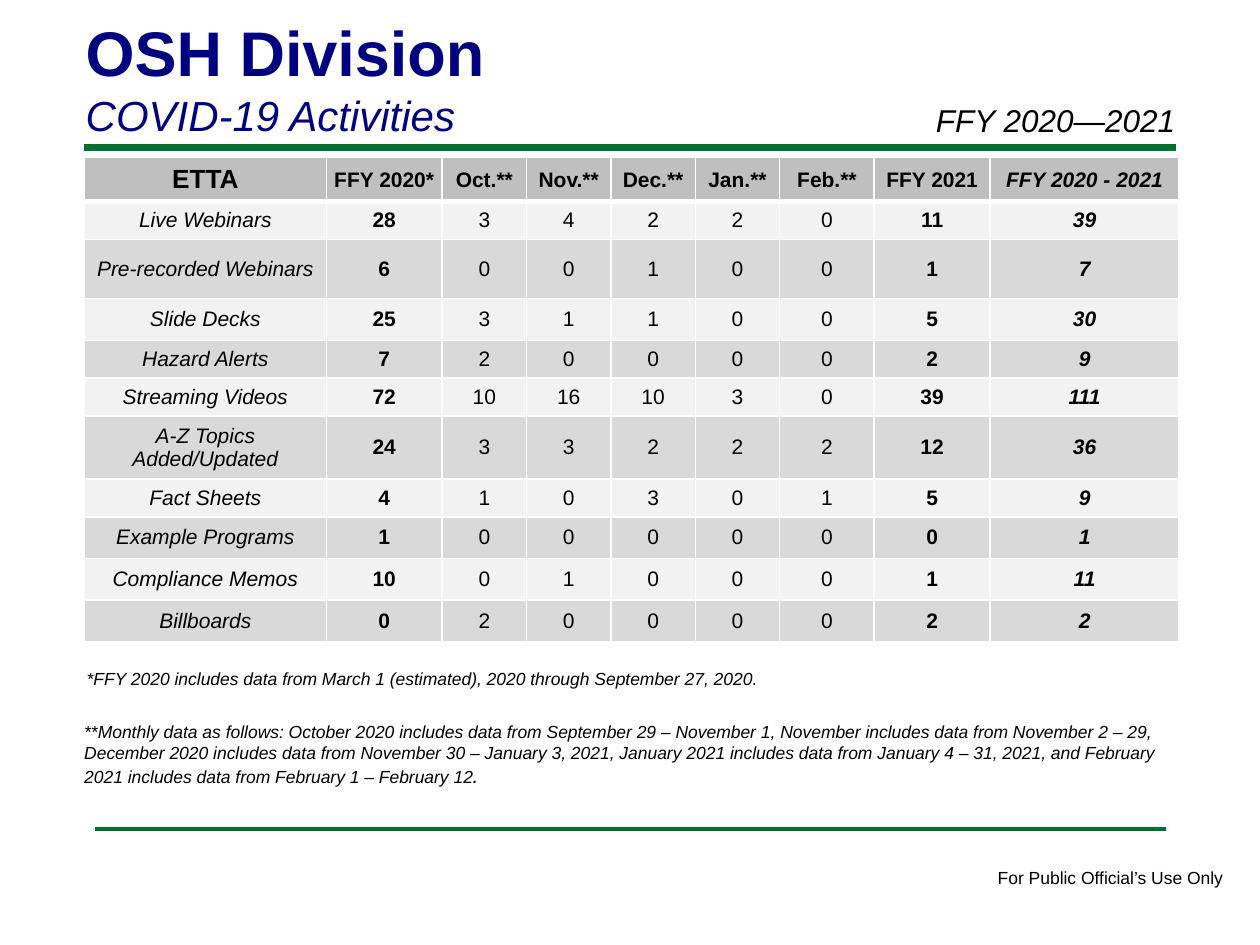
from lxml import etree
from pptx import Presentation
from pptx.dml.color import RGBColor
from pptx.enum.shapes import MSO_CONNECTOR
from pptx.enum.text import MSO_ANCHOR, MSO_AUTO_SIZE, PP_ALIGN
from pptx.oxml import parse_xml
from pptx.oxml.ns import nsdecls, qn
from pptx.util import Inches, Pt

LINE = MSO_CONNECTOR.STRAIGHT
TOP, MIDDLE = MSO_ANCHOR.TOP, MSO_ANCHOR.MIDDLE
LEFT, CENTER = PP_ALIGN.LEFT, PP_ALIGN.CENTER
FIXED = MSO_AUTO_SIZE.NONE

NAVY = RGBColor(0x00, 0x00, 0x80)
GREEN = RGBColor(0x00, 0x70, 0x30)
BLACK = RGBColor(0x00, 0x00, 0x00)
HEAD = RGBColor(0xBF, 0xBF, 0xBF)
LIGHT = RGBColor(0xF2, 0xF2, 0xF2)
DARK = RGBColor(0xD9, 0xD9, 0xD9)
WHITE = RGBColor(0xFF, 0xFF, 0xFF)

WIDTHS = [1.92, 0.92] + [0.67] * 4 + [0.75, 0.92, 1.5]
HEIGHTS = [0.33, 0.28, 0.47, 0.33, 0.28, 0.28, 0.47, 0.28, 0.33, 0.33, 0.33]
BOLD_COLS = (1, 7, 8)
ITALIC_COLS = (0, 8)
ROWS = [
    ["ETTA", "FFY 2020*", "Oct.**", "Nov.**", "Dec.**", "Jan.**", "Feb.**",
     "FFY 2021", "FFY 2020 - 2021"],
    ["Live Webinars", 28, 3, 4, 2, 2, 0, 11, 39],
    ["Pre-recorded Webinars", 6, 0, 0, 1, 0, 0, 1, 7],
    ["Slide Decks", 25, 3, 1, 1, 0, 0, 5, 30],
    ["Hazard Alerts", 7, 2, 0, 0, 0, 0, 2, 9],
    ["Streaming Videos", 72, 10, 16, 10, 3, 0, 39, 111],
    ["A-Z Topics Added/Updated", 24, 3, 3, 2, 2, 2, 12, 36],
    ["Fact Sheets", 4, 1, 0, 3, 0, 1, 5, 9],
    ["Example Programs", 1, 0, 0, 0, 0, 0, 0, 1],
    ["Compliance Memos", 10, 0, 1, 0, 0, 0, 1, 11],
    ["Billboards", 0, 2, 0, 0, 0, 0, 2, 2],
]
MONTHS = (
    "**Monthly data as follows: October 2020 includes data from September 29 – "
    "November 1, November includes data from November 2 – 29, December 2020 "
    "includes data from November 30 – January 3, 2021, January 2021 includes "
    "data from January 4 – 31, 2021, and February 2021 includes data from "
    "February 1 – February 12"
)


class Deck:
    face = "Arial"

    def __init__(self):
        self.prs = Presentation()
        self.prs.slide_width = Inches(10)
        self.prs.slide_height = Inches(7.5)
        self.slide = self.prs.slides.add_slide(self.prs.slide_layouts[5])

    def style(self, run, size, color=BLACK, bold=False, italic=False):
        font = run.font
        font.name, font.size = self.face, Pt(size)
        font.bold, font.italic = bold, italic
        font.color.rgb = color

    def title(self, head, sub, left, top, width, height):
        shape = self.slide.shapes.title
        shape.left, shape.top = Inches(left), Inches(top)
        shape.width, shape.height = Inches(width), Inches(height)
        frame = shape.text_frame
        frame.text = f"{head}\n{sub}"
        frame.vertical_anchor, frame.auto_size = TOP, FIXED
        first, second = frame.paragraphs
        first.alignment = second.alignment = LEFT
        self.style(first.runs[0], 36, NAVY, bold=True)
        self.style(second.runs[0], 24, NAVY, italic=True)

    def rule(self, left, right, top, weight):
        line = self.slide.shapes.add_connector(
            LINE, Inches(left), Inches(top), Inches(right), Inches(top))
        line.line.color.rgb, line.line.width = GREEN, Pt(weight)
        etree.SubElement(line._element.spPr, qn("a:effectLst"))

    def text(self, words, left, top, width, height, size, italic=True, wrap=True):
        box = self.slide.shapes.add_textbox(
            Inches(left), Inches(top), Inches(width), Inches(height))
        frame = box.text_frame
        frame.text, frame.word_wrap = words, wrap
        par = frame.paragraphs[0]
        self.style(par.runs[0], size, italic=italic)
        return par

    def border(self, cell, low):
        props = cell._tc.get_or_add_tcPr()
        for side, weight in (("L", 1), ("R", 1), ("T", 1), ("B", low)):
            props.append(parse_xml(
                f'<a:ln{side} {nsdecls("a")} w="{Pt(weight)}"><a:solidFill>'
                f'<a:srgbClr val="{WHITE}"/></a:solidFill></a:ln{side}>'))

    def cell(self, cell, value, row, col):
        top = row == 0
        cell.text = str(value)
        cell.vertical_anchor = MIDDLE
        if top and col:
            cell.margin_left = cell.margin_right = cell.margin_top = Inches(0.01)
            cell.margin_bottom = 0
        self.border(cell, 3 if top else 1)
        cell.fill.solid()
        cell.fill.fore_color.rgb = HEAD if top else LIGHT if row % 2 else DARK
        par = cell.text_frame.paragraphs[0]
        par.alignment = CENTER
        self.style(par.runs[0], 15 if top and col == 0 else 12,
                   bold=top or col in BOLD_COLS,
                   italic=col in ITALIC_COLS and not (top and col == 0))

    def table(self, rows, left, top):
        table = self.slide.shapes.add_table(
            len(rows), len(WIDTHS), Inches(left), Inches(top),
            Inches(sum(WIDTHS)), Inches(sum(HEIGHTS))).table
        for col, width in zip(table.columns, WIDTHS):
            col.width = Inches(width)
        for line, height in zip(table.rows, HEIGHTS):
            line.height = Inches(height)
        for r, row in enumerate(rows):
            for c, value in enumerate(row):
                self.cell(table.cell(r, c), value, r, c)


def main():
    deck = Deck()
    deck.rule(0.67, 9.33, 1.17, 4)
    deck.rule(0.75, 9.25, 6.58, 2)
    deck.text("For Public Official’s Use Only", 7.82, 6.83, 2.01, 0.27, 10,
              italic=False, wrap=False)
    deck.title("OSH Division", "COVID-19 Activities", 0.58, 0.06, 8.25, 1.11)
    deck.table(ROWS, 0.67, 1.25)
    deck.text("*FFY 2020 includes data from March 1 (estimated), 2020 through "
              "September 27, 2020.", 0.59, 5.25, 8.73, 0.27, 10)
    note = deck.text(MONTHS, 0.57, 5.67, 8.75, 0.64, 10)
    stop = note.add_run()
    stop.text = "."
    deck.style(stop, 12, italic=True)
    deck.text("FFY 2020—2021", 7.33, 0.75, 2.5, 0.4, 18)
    deck.prs.save("out.pptx")


if __name__ == "__main__":
    main()
